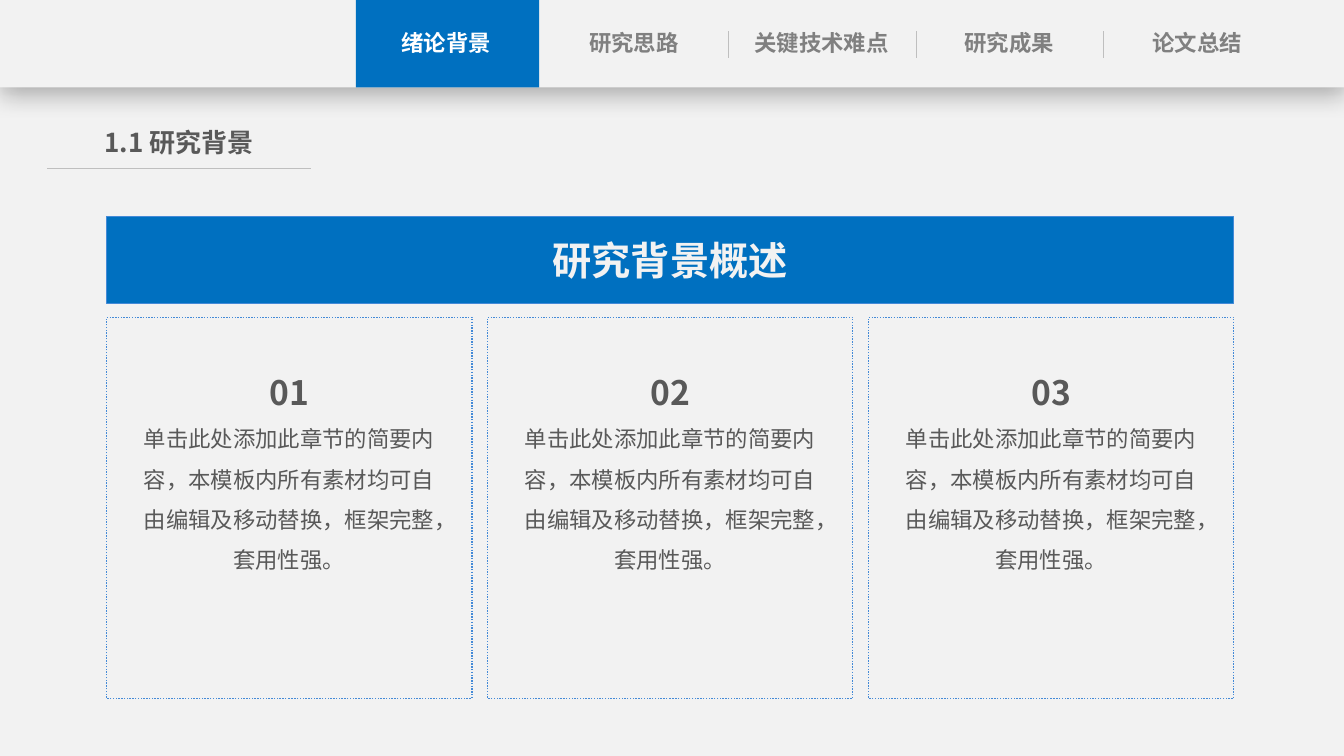
from lxml import etree
from pptx import Presentation
from pptx import util as u
from pptx.dml.color import RGBColor
from pptx.enum import dml, shapes, text
from pptx.oxml import parse_xml
from pptx.oxml.ns import nsdecls, qn

Pt = u.Pt
FONT = "Noto Sans CJK SC"
PALE = RGBColor(0xF2, 0xF2, 0xF2)
WHITE = RGBColor(0xFF, 0xFF, 0xFF)
BLUE = RGBColor(0x00, 0x70, 0xC0)
EDGE_BLUE = RGBColor(0x44, 0x8A, 0xD7)
RULE_GRAY = RGBColor(0xBF, 0xBF, 0xBF)
TAB_GRAY = RGBColor(0x80, 0x80, 0x80)
TEXT_GRAY = RGBColor(0x59, 0x59, 0x59)

WIDTH, HEIGHT = 960, 540
TABS = ["绪论背景", "研究思路", "关键技术难点", "研究成果", "论文总结"]
CARD_TEXT = "单击此处添加此章节的简要内容，本模板内所有素材均可自由编辑及移动替换，框架完整，套用性强。"
CARDS = [("01", CARD_TEXT), ("02", CARD_TEXT), ("03", CARD_TEXT)]


def style_paragraph(paragraph, size, color, bold=True):
    paragraph.alignment = text.PP_ALIGN.CENTER
    font = paragraph.font
    font.name, font.size, font.bold = FONT, Pt(size), bold
    font.color.rgb = color
    # East Asian characters take their own typeface entry
    latin = paragraph._p.pPr.find(qn("a:defRPr")).find(qn("a:latin"))
    latin.addnext(parse_xml(f'<a:ea {nsdecls("a")} typeface="{FONT}"/>'))


def add_rectangle(slide, left, top, width, height, fill=None, edge=None):
    shape = slide.shapes.add_shape(
        shapes.MSO_SHAPE.RECTANGLE, Pt(left), Pt(top), Pt(width), Pt(height))
    shape.shadow.inherit = False
    if fill is None:
        shape.fill.background()
    else:
        shape.fill.solid()
        shape.fill.fore_color.rgb = fill
    if edge is None:
        shape.line.fill.background()
    else:
        shape.line.color.rgb = edge
        shape.line.width = Pt(1)
    return shape


def add_rule(slide, x1, y1, x2, y2):
    line = slide.shapes.add_connector(
        shapes.MSO_CONNECTOR.STRAIGHT, Pt(x1), Pt(y1), Pt(x2), Pt(y2))
    line.line.color.rgb = RULE_GRAY
    line.line.width = Pt(0.5)
    etree.SubElement(line._element.spPr, qn("a:effectLst"))


def add_text_box(slide, left, top, width, height, margin=3.6):
    frame = slide.shapes.add_textbox(
        Pt(left), Pt(top), Pt(width), Pt(height)).text_frame
    frame.word_wrap = True
    frame.auto_size = text.MSO_AUTO_SIZE.SHAPE_TO_FIT_TEXT
    frame.margin_left = frame.margin_right = 0
    frame.margin_top = frame.margin_bottom = Pt(margin)
    return frame


def add_label(slide, left, top, width, height, words, size, color):
    paragraph = add_text_box(slide, left, top, width, height).paragraphs[0]
    paragraph.text = words
    style_paragraph(paragraph, size, color)


def add_navigation(slide, left, top, width, height, active=0):
    bar = add_rectangle(slide, left, top, width, height, PALE)
    effects = bar._element.spPr.find(qn("a:effectLst"))
    effects.append(parse_xml(
        f'<a:outerShdw {nsdecls("a")} blurRad="{Pt(18)}" dist="{Pt(4)}" '
        'dir="5400000" algn="t" rotWithShape="0"><a:srgbClr val="000000">'
        '<a:alpha val="29000"/></a:srgbClr></a:outerShdw>'))

    # Equal tabs, with a divider between inactive neighbours
    pitch, first = 134.1, left + 252
    for index, words in enumerate(TABS):
        tab_left = first + index * pitch
        if index == active:
            add_rectangle(slide, tab_left + 2.2, top, 131, height, BLUE)
        elif index > active + 1:
            add_rule(slide, tab_left, top + 22.3, tab_left, top + 41.8)
        add_label(slide, tab_left + 13.8, top + 17.3, 105.8, 27.4, words, 16,
                  WHITE if index == active else TAB_GRAY)


def add_section_title(slide, left, top, width, height, words):
    add_label(slide, left + 30.2, top, 128.2, 30.2, words, 18.6, TEXT_GRAY)
    add_rule(slide, left, top + height, left + width, top + height)


def add_banner(slide, left, top, width, height, words):
    banner = add_rectangle(slide, left, top, width, height, BLUE, EDGE_BLUE)
    banner.text_frame.vertical_anchor = text.MSO_ANCHOR.MIDDLE
    paragraph = banner.text_frame.paragraphs[0]
    paragraph.text = words
    style_paragraph(paragraph, 28, PALE)


def add_card(slide, left, top, width, height, number, body):
    border = add_rectangle(slide, left, top, width, height, edge=EDGE_BLUE)
    border.line.dash_style = dml.MSO_LINE.ROUND_DOT

    inset = 21
    frame = add_text_box(slide, left + inset, top + 24.5,
                         width - 2 * inset, 160, margin=0)
    heading, description = frame.paragraphs[0], frame.add_paragraph()
    heading.text, description.text = number, body
    style_paragraph(heading, 24, TEXT_GRAY)
    style_paragraph(description, 16, TEXT_GRAY, bold=False)
    heading.line_spacing = description.line_spacing = 1.5


def add_overview(slide, left, top, width, height):
    add_banner(slide, left, top, width, 62, "研究背景概述")
    # Three equal cards below the banner
    gap, cards_top = 11.2, 72
    card_width = (width - gap * (len(CARDS) - 1)) / len(CARDS)
    for index, (number, body) in enumerate(CARDS):
        add_card(slide, left + index * (card_width + gap), top + cards_top,
                 card_width, height - cards_top, number, body)


def main():
    presentation = Presentation()
    presentation.slide_width, presentation.slide_height = Pt(WIDTH), Pt(HEIGHT)
    slide = presentation.slides.add_slide(presentation.slide_layouts[6])
    slide.background.fill.solid()
    slide.background.fill.fore_color.rgb = PALE

    add_navigation(slide, 0, 0, WIDTH, 62.4)
    add_section_title(slide, 33.6, 87, 188.6, 33.2, "1.1 研究背景")
    add_overview(slide, 76.1, 154.7, 805.2, 344.2)
    presentation.save("out.pptx")


if __name__ == "__main__":
    main()
